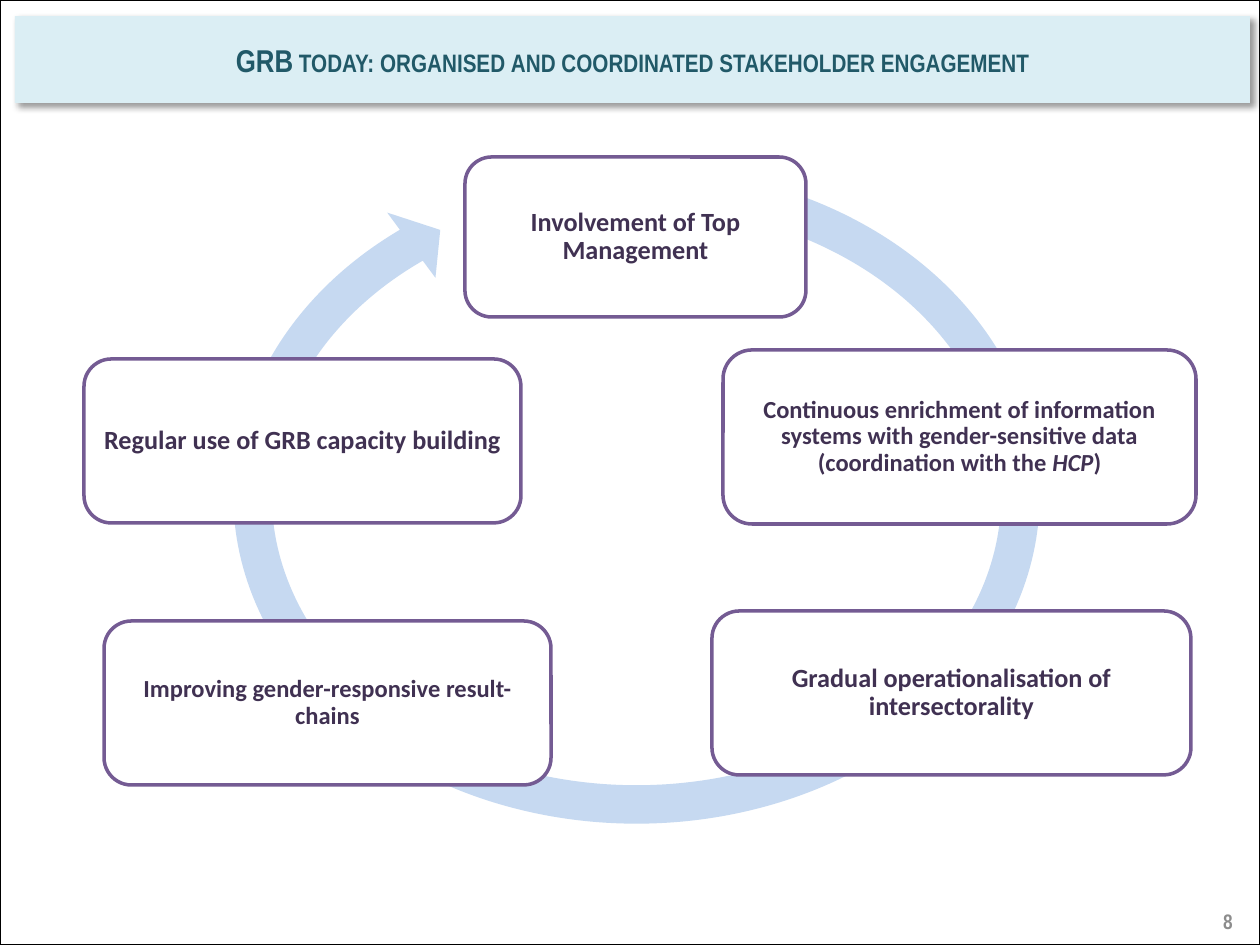
import pptx
import pptx.util
import pptx.dml.color
import pptx.enum.shapes
import pptx.enum.text
import pptx.oxml
import pptx.oxml.ns

RGBColor = pptx.dml.color.RGBColor
SHAPE = pptx.enum.shapes.MSO_SHAPE
ALIGN = pptx.enum.text.PP_ALIGN
MIDDLE = pptx.enum.text.MSO_ANCHOR.MIDDLE

PX_PER_INCH = 126
BLACK = RGBColor(0x00, 0x00, 0x00)
WHITE = RGBColor(0xFF, 0xFF, 0xFF)
BANNER = RGBColor(0xDB, 0xEE, 0xF4)
TEAL = RGBColor(0x21, 0x59, 0x68)
GREY = RGBColor(0x8C, 0x8C, 0x8C)
RING = RGBColor(0xC6, 0xD9, 0xF1)
PURPLE = RGBColor(0x74, 0x5B, 0x93)
INK = RGBColor(0x40, 0x31, 0x52)

RING_ADJUSTMENTS = (0.055, 3.307, 136.812, 174.439, 0.058)

STEPS = [
    ((465, 157, 341, 160), 15, [("Involvement of Top Management", False)]),
    ((104, 621, 447, 164), 14,
     [("Improving gender-responsive result- chains", False)]),
    ((712, 611, 479, 164), 15,
     [("Gradual operationalisation of intersectorality", False)]),
    ((723, 350, 473, 174), 14,
     [("Continuous enrichment of information systems with gender-sensitive "
       "data (coordination with the ", False), ("HCP", True), (")", False)]),
    ((84, 359, 437, 164), 15, [("Regular use of GRB capacity building", False)]),
]


def px(n):
    return pptx.util.Emu(round(n * 914400 / PX_PER_INCH))


def box(*lengths):
    return [px(n) for n in lengths]


def style_paragraph(p, name, size, color, align):
    p.alignment = align
    p.font.name = name
    p.font.size = pptx.util.Pt(size)
    p.font.bold = True
    p.font.color.rgb = color


def add_shape(slide, kind, at, fill=None, line=None, width=0):
    sp = slide.shapes.add_shape(kind, *box(*at))
    sp.shadow.inherit = False
    if fill is None:
        sp.fill.background()
    else:
        sp.fill.solid()
        sp.fill.fore_color.rgb = fill
    if line is None:
        sp.line.fill.background()
    else:
        sp.line.color.rgb = line
        sp.line.width = pptx.util.Pt(width)
    return sp


def set_banner_outline(sp):
    ns = pptx.oxml.ns.nsdecls("a")
    sp._element.spPr.append(pptx.oxml.parse_xml(
        f'<a:prstGeom {ns} prst="snip2DiagRect"><a:avLst/></a:prstGeom>'))
    sp.fill.solid()
    sp.fill.fore_color.rgb = BANNER
    sp._element.spPr.append(pptx.oxml.parse_xml(
        f'<a:effectLst {ns}><a:outerShdw blurRad="50800" dist="38100" '
        'dir="2700000" algn="tl" rotWithShape="0"><a:srgbClr val="000000">'
        '<a:alpha val="40000"/></a:srgbClr></a:outerShdw></a:effectLst>'))


def add_title(slide, text):
    sp = slide.shapes.title
    sp.left, sp.top, sp.width, sp.height = box(15, 16, 1235, 87)
    set_banner_outline(sp)
    tf = sp.text_frame
    tf.auto_size = pptx.enum.text.MSO_AUTO_SIZE.NONE
    tf.vertical_anchor = MIDDLE
    p = tf.paragraphs[0]
    style_paragraph(p, "Arial Narrow", 18, TEAL, ALIGN.CENTER)
    r = p.add_run()
    r.text = text
    r.font._element.set("cap", "small")


def add_page_number(slide, number):
    tf = slide.shapes.add_textbox(*box(951, 896, 294, 50)).text_frame
    tf.word_wrap = True
    tf.vertical_anchor = MIDDLE
    p = tf.paragraphs[0]
    p.text = number
    style_paragraph(p, "Arial Narrow", 12, GREY, ALIGN.RIGHT)


def add_ring(slide):
    sp = add_shape(slide, SHAPE.CIRCULAR_ARROW, (212, 146, 849, 699), RING)
    for i, value in enumerate(RING_ADJUSTMENTS):
        sp.adjustments[i] = value


def add_step(slide, at, size, runs):
    sp = add_shape(slide, SHAPE.ROUNDED_RECTANGLE, at, WHITE, PURPLE, 2)
    tf = sp.text_frame
    tf.word_wrap = True
    tf.vertical_anchor = MIDDLE
    tf.margin_left = tf.margin_right = px(8)
    tf.margin_top = tf.margin_bottom = px(8)
    p = tf.paragraphs[0]
    style_paragraph(p, "Calibri", size, INK, ALIGN.CENTER)
    p.line_spacing = 0.9
    for text, italic in runs:
        r = p.add_run()
        r.text = text
        if italic:
            r.font.italic = True


def main():
    prs = pptx.Presentation()
    prs.slide_width, prs.slide_height = box(1260, 945)
    slide = prs.slides.add_slide(prs.slide_layouts[5])
    add_title(slide, "GRB today: organised and coordinated stakeholder engagement")
    add_shape(slide, SHAPE.RECTANGLE, (0, 0, 1260, 945), line=BLACK, width=0.75)
    add_page_number(slide, "8")
    add_ring(slide)
    for at, size, runs in STEPS:
        add_step(slide, at, size, runs)
    prs.save("out.pptx")


if __name__ == "__main__":
    main()
